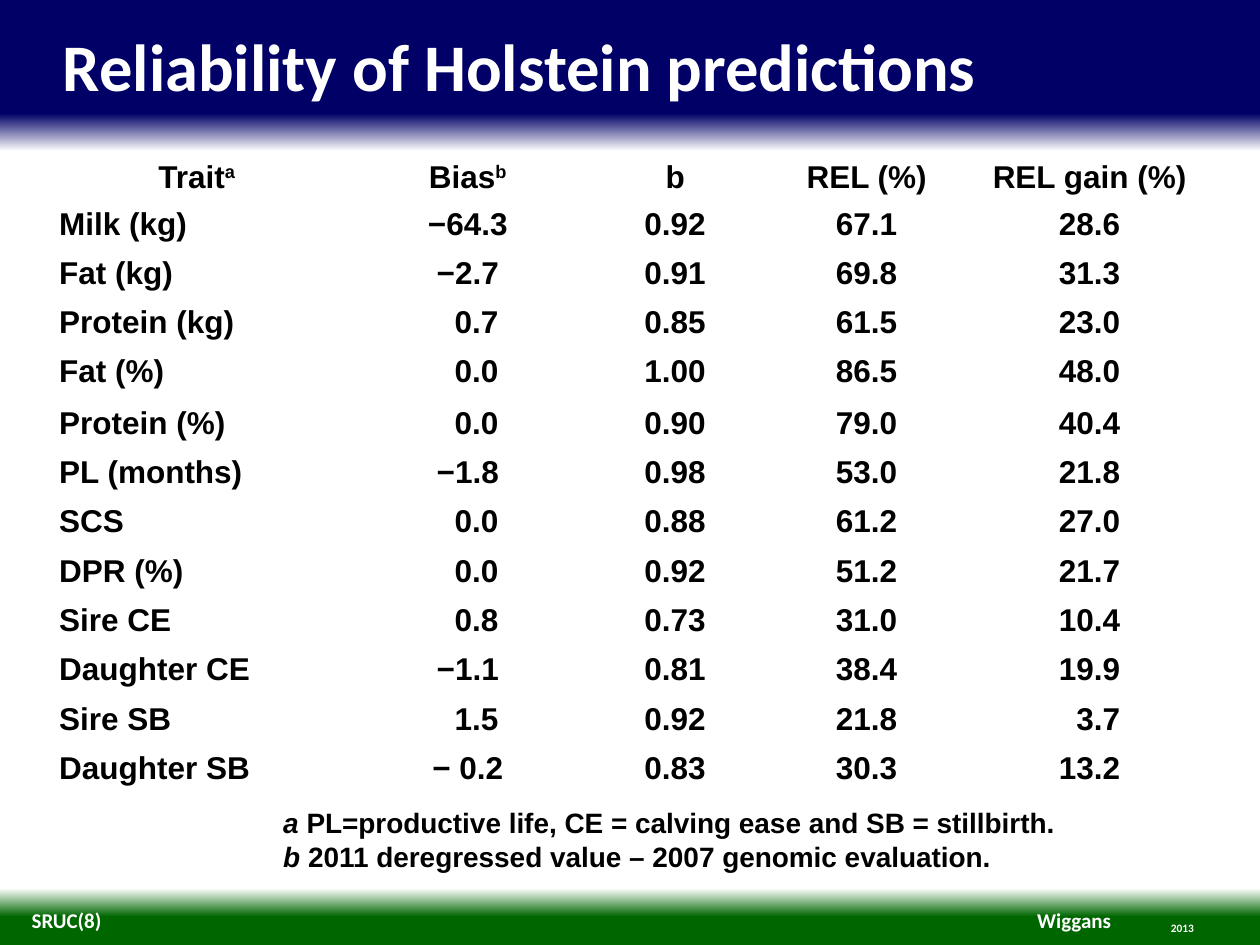
from lxml import etree
from pptx import Presentation
from pptx.dml.color import RGBColor
from pptx.enum.text import MSO_ANCHOR, PP_ALIGN
from pptx.oxml.ns import qn
from pptx.util import Cm, Pt

NAVY = RGBColor(0x00, 0x00, 0x66)
GREEN = RGBColor(0x00, 0x66, 0x00)
WHITE = RGBColor(0xFF, 0xFF, 0xFF)
BLACK = RGBColor(0x00, 0x00, 0x00)
LEFT, CENTER, RIGHT = PP_ALIGN.LEFT, PP_ALIGN.CENTER, PP_ALIGN.RIGHT
TOP, MIDDLE, BOTTOM = MSO_ANCHOR.TOP, MSO_ANCHOR.MIDDLE, MSO_ANCHOR.BOTTOM
NO_STYLE = "{2D5ABB26-0587-4C30-8999-92F81FD0307C}"


def set_font(font, name, size, color):
    font.name = name
    font.size = Pt(size)
    font.bold = True
    font.color.rgb = color


def add_textbox(left, top, width, height, anchor, inset=0, wrap=True):
    box = slide.shapes.add_textbox(Cm(left), Cm(top), Cm(width), Cm(height))
    frame = box.text_frame
    frame.word_wrap = wrap
    frame.vertical_anchor = anchor
    frame.margin_left = frame.margin_right = Cm(inset)
    frame.margin_top = frame.margin_bottom = Cm(inset / 2)
    return frame


presentation = Presentation()
presentation.slide_width = Cm(25.4)
presentation.slide_height = Cm(19.05)
slide = presentation.slides.add_slide(presentation.slide_layouts[6])

# Background: navy band, white body, green band
background = slide.background.fill
background.gradient()
background.gradient_angle = 270
stops = slide._element.find(".//" + qn("a:gsLst"))
for stop in list(stops):
    stops.remove(stop)
for percent, color in [(0, NAVY), (12, NAVY), (16, WHITE),
                       (94, WHITE), (97, GREEN), (100, GREEN)]:
    stop = etree.SubElement(stops, qn("a:gs"), pos=str(percent * 1000))
    etree.SubElement(stop, qn("a:srgbClr"), val=str(color))

# Title and footer
for text, left, top, width, height, size, align, anchor, wrap in [
    ("Wiggans", 20.9, 18.29, 1.5, 0.51, 12, RIGHT, MIDDLE, False),
    ("SRUC(8)", 0.64, 18.29, 13.26, 0.51, 12, LEFT, MIDDLE, True),
    ("2013", 23.06, 18.57, 1.55, 0.28, 6.5, CENTER, MIDDLE, True),
    ("Reliability of Holstein predictions",
     1.27, 0.51, 22.86, 1.52, 38, LEFT, TOP, True),
]:
    paragraph = add_textbox(left, top, width, height, anchor, wrap=wrap).paragraphs[0]
    paragraph.text = text
    paragraph.alignment = align
    set_font(paragraph.font, "Calibri", size, WHITE)

# Table: each cell is a text, headers may carry a superscript note mark
headers = [("Trait", "a"), ("Bias", "b"), ("b", ""), ("REL (%)", ""), ("REL gain (%)", "")]
traits = [
    ("Milk (kg)", "−64.3", "0.92", "67.1", "28.6"),
    ("Fat (kg)", "−2.7", "0.91", "69.8", "31.3"),
    ("Protein (kg)", "0.7", "0.85", "61.5", "23.0"),
    ("Fat (%)", "0.0", "1.00", "86.5", "48.0"),
    ("Protein (%)", "0.0", "0.90", "79.0", "40.4"),
    ("PL (months)", "−1.8", "0.98", "53.0", "21.8"),
    ("SCS", "0.0", "0.88", "61.2", "27.0"),
    ("DPR (%)", "0.0", "0.92", "51.2", "21.7"),
    ("Sire CE", "0.8", "0.73", "31.0", "10.4"),
    ("Daughter CE", "−1.1", "0.81", "38.4", "19.9"),
    ("Sire SB", "1.5", "0.92", "21.8", "3.7"),
    ("Daughter SB", "− 0.2", "0.83", "30.3", "13.2"),
]
rows = [headers] + [[(text, "") for text in trait] for trait in traits]
column_widths = [6.05, 4.88, 3.48, 4.24, 4.75]
row_height, tall_row_height, tall_row = 0.97, 1.04, 4
hanging, sign_width = 0.81, 0.35

table_shape = slide.shapes.add_table(len(rows), len(column_widths), Cm(0.94), Cm(3.05),
                                     Cm(sum(column_widths)), Cm(row_height * len(rows)))
table = table_shape.table
table.first_row = table.horz_banding = False
table._tbl.tblPr.find(qn("a:tableStyleId")).text = NO_STYLE
for column, width in zip(table.columns, column_widths):
    column.width = Cm(width)

for row_index, row in enumerate(rows):
    table.rows[row_index].height = Cm(tall_row_height if row_index == tall_row else row_height)
    for column_index, (text, mark) in enumerate(row):
        cell = table.cell(row_index, column_index)
        cell.fill.background()
        cell.margin_top, cell.margin_bottom = Cm(0.12), Cm(0.11)
        cell.vertical_anchor = BOTTOM if row_index == 0 else TOP
        paragraph = cell.text_frame.paragraphs[0]
        paragraph.alignment = LEFT if row_index and column_index == 0 else CENTER
        # Unsigned biases and one-digit gains move right to keep decimals in line
        shifted = row_index and (column_index == 1 and text[0] != "−"
                                 or column_index == 4 and len(text) == 3)
        properties = paragraph._p.get_or_add_pPr()
        properties.set("marL", str(Cm(hanging)))
        properties.set("indent", str(Cm((sign_width if shifted else 0) - hanging)))
        paragraph.add_run().text = text
        if mark:
            superscript = paragraph.add_run()
            superscript.text = mark
            superscript._r.get_or_add_rPr().set("baseline", "30000")
        set_font(paragraph.font, "Arial", 18, BLACK)

# Footnotes
footnotes = add_textbox(5.46, 16.1, 16.31, 1.63, MIDDLE, inset=0.25, wrap=False)
for index, (mark, note) in enumerate([
    ("a ", "PL=productive life, CE = calving ease and SB = stillbirth."),
    ("b ", "2011 deregressed value – 2007 genomic evaluation."),
]):
    paragraph = footnotes.add_paragraph() if index else footnotes.paragraphs[0]
    for text, italic in [(mark, True), (note, False)]:
        run = paragraph.add_run()
        run.text = text
        run.font.italic = italic
    set_font(paragraph.font, "Arial", 16, BLACK)

presentation.save("out.pptx")
